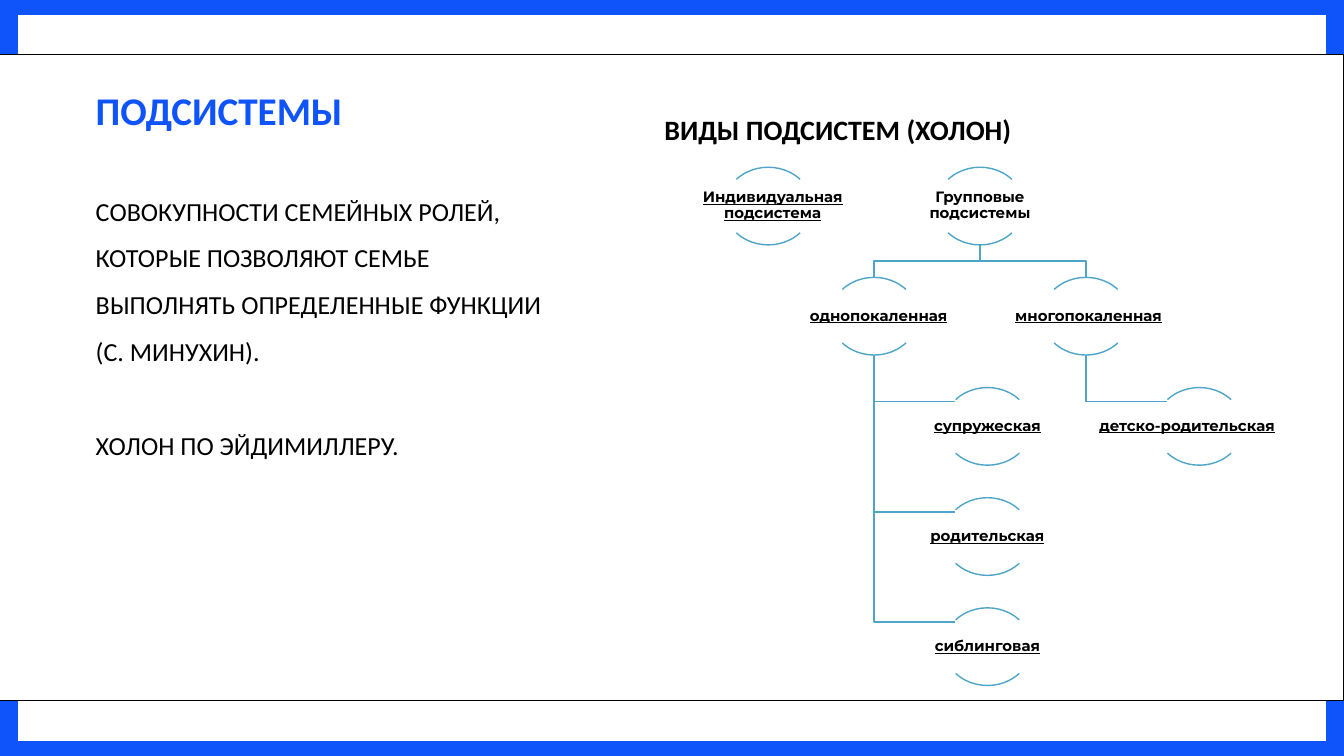
from pptx import Presentation
from pptx.dml.color import RGBColor
from pptx.enum.shapes import MSO_SHAPE
from pptx.enum.text import MSO_ANCHOR, PP_ALIGN
from pptx.util import Inches, Pt

COLORS = {"frame": "0F54FB", "paper": "FFFFFF", "ink": "000000", "branch": "4FA5C7"}

# Lengths are percent of the slide's width and height.
TREE_LEFT, TREE_TOP = 57.16, 22.13
COLUMN_STEP, ROW_STEP = 7.88, 14.57
ARC_WIDTH, ARC_HEIGHT = 6.53, 10.27
LABEL_WIDTH, LABEL_HEIGHT = 13.58, 6.53
LABEL_DROP = 1.87
ELBOW_GAP = 2.4
ARC_ANGLES = [(132, 192), (24, 84)]

# Label: column, row, sideways shift of the label, parent label
NODES = {
    "Индивидуальная подсистема": (0, 0, 0.34, None),
    "Групповые подсистемы": (2, 0, 0, None),
    "однопокаленная": (1, 1, 0.34, "Групповые подсистемы"),
    "многопокаленная": (3, 1, 0.2, "Групповые подсистемы"),
    "супружеская": (2.07, 2, 0, "однопокаленная"),
    "родительская": (2.07, 3, 0, "однопокаленная"),
    "сиблинговая": (2.07, 4, 0, "однопокаленная"),
    "детско-родительская": (4.07, 2, -0.9, "многопокаленная"),
}


def add_text(frame, text, *, size, font="Calibri", color="ink", bold=False,
             underline=None, align=PP_ALIGN.LEFT, spacing=1.0, gap=0):
    """Write each line of text as a paragraph, with gap points between them."""
    for index, line in enumerate(text.split("\n")):
        paragraph = frame.paragraphs[0] if index == 0 else frame.add_paragraph()
        paragraph.alignment = align
        paragraph.line_spacing = spacing
        paragraph.space_before = Pt(gap if index else 0)
        run = paragraph.add_run()
        run.text = line
        run.font.name = font
        run.font.size = Pt(size)
        run.font.bold = bold
        run.font.underline = underline
        run.font.color.rgb = RGBColor.from_string(COLORS[color])


class SubsystemSlide:
    def __init__(self, presentation):
        self.width = presentation.slide_width
        self.height = presentation.slide_height
        self.shapes = presentation.slides.add_slide(presentation.slide_layouts[6]).shapes

    def place(self, left, top):
        return round(self.width * left / 100), round(self.height * top / 100)

    def style(self, shape, fill=None, line=None, weight=1):
        shape.shadow.inherit = False
        if fill:
            shape.fill.solid()
            shape.fill.fore_color.rgb = RGBColor.from_string(COLORS[fill])
        else:
            shape.fill.background()
        if line:
            shape.line.color.rgb = RGBColor.from_string(COLORS[line])
            shape.line.width = Pt(weight)
        else:
            shape.line.fill.background()

    def rectangle(self, left, top, width, height, **look):
        shape = self.shapes.add_shape(
            MSO_SHAPE.RECTANGLE, *self.place(left, top), *self.place(width, height))
        self.style(shape, **look)

    def text(self, left, top, width, height, text, *, inset=0.13,
             anchor=MSO_ANCHOR.TOP, **text_format):
        box = self.shapes.add_textbox(*self.place(left, top), *self.place(width, height))
        frame = box.text_frame
        frame.word_wrap = True
        frame.vertical_anchor = anchor
        frame.margin_left = frame.margin_right = Inches(inset)
        frame.margin_top = frame.margin_bottom = Inches(inset)
        add_text(frame, text, **text_format)

    def branch(self, points):
        start, *rest = [self.place(*point) for point in points]
        builder = self.shapes.build_freeform(*start)
        builder.add_line_segments(rest, close=False)
        self.style(builder.convert_to_shape(), line="branch")

    def arcs(self, center, top):
        for angles in ARC_ANGLES:
            arc = self.shapes.add_shape(
                MSO_SHAPE.ARC, *self.place(center - ARC_WIDTH / 2, top),
                *self.place(ARC_WIDTH, ARC_HEIGHT))
            arc.adjustments[0], arc.adjustments[1] = angles
            self.style(arc, line="branch")

    def node(self, label, center, top, shift, underline):
        self.arcs(center, top)
        self.text(center + shift - LABEL_WIDTH / 2, top + LABEL_DROP,
                  LABEL_WIDTH, LABEL_HEIGHT, label, inset=0.01,
                  anchor=MSO_ANCHOR.MIDDLE, size=10.7, font="Montserrat", bold=True,
                  underline=underline, align=PP_ALIGN.CENTER, spacing=0.9)


def node_place(label):
    """Return the centre and top of a node."""
    column, row, *_ = NODES[label]
    return TREE_LEFT + column * COLUMN_STEP, TREE_TOP + row * ROW_STEP


def branch_points(parent, child):
    """Fork from a top-level parent; otherwise hang the child from a stem."""
    parent_x, parent_top = node_place(parent)
    child_x, child_top = node_place(child)
    bottom = parent_top + ARC_HEIGHT
    if NODES[parent][1] == 0:
        middle = (bottom + child_top) / 2
        return [(parent_x, bottom), (parent_x, middle), (child_x, middle), (child_x, child_top)]
    joint = child_top + LABEL_DROP
    return [(parent_x, bottom), (parent_x, joint), (child_x - ELBOW_GAP, joint)]


def main():
    presentation = Presentation()
    presentation.slide_width = Inches(13.33)
    presentation.slide_height = Inches(7.5)
    slide = SubsystemSlide(presentation)

    slide.rectangle(0, 0, 100, 100, fill="frame")
    slide.rectangle(1.35, 2, 97.3, 96, fill="paper")
    slide.rectangle(0, 7.2, 100, 85.47, fill="paper", line="ink", weight=0.75)

    slide.text(6.15, 9.73, 92, 11.2, "ПОДСИСТЕМЫ", size=28, color="frame", bold=True)
    slide.text(6.15, 22, 35.33, 65.73,
               "СОВОКУПНОСТИ СЕМЕЙНЫХ РОЛЕЙ, КОТОРЫЕ ПОЗВОЛЯЮТ СЕМЬЕ ВЫПОЛНЯТЬ "
               "ОПРЕДЕЛЕННЫЕ ФУНКЦИИ (С. МИНУХИН).\nХОЛОН ПО ЭЙДИМИЛЛЕРУ.",
               size=18.6, spacing=1.5, gap=33.5)
    slide.text(48.46, 13.2, 46.81, 8, "ВИДЫ ПОДСИСТЕМ (ХОЛОН)", size=20, bold=True)

    for label, (_, _, _, parent) in NODES.items():
        if parent:
            slide.branch(branch_points(parent, label))
    for label, (_, _, shift, _) in NODES.items():
        slide.node(label, *node_place(label), shift, label != "Групповые подсистемы")

    presentation.save("out.pptx")


if __name__ == "__main__":
    main()
